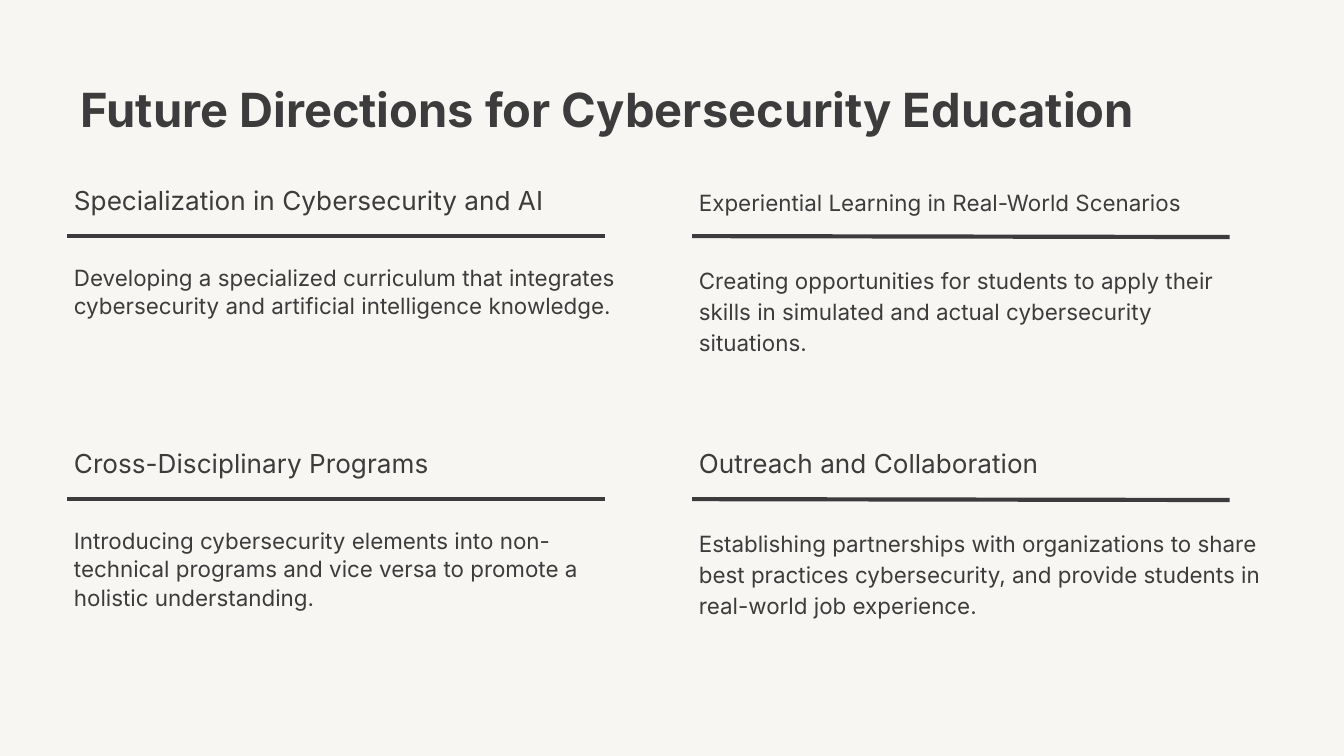
from lxml import etree
from pptx import Presentation
from pptx.dml.color import RGBColor
from pptx.enum import shapes, text
from pptx.oxml.ns import qn
from pptx.util import Pt

INK = RGBColor(0x3C, 0x3C, 0x3C)
PAPER = RGBColor(0xF8, 0xF6, 0xF3)
FONT = "Inter"

prs = Presentation()
prs.slide_width, prs.slide_height = Pt(720), Pt(405)
s = prs.slides.add_slide(prs.slide_layouts[5])
s.background.fill.solid()
s.background.fill.fore_color.rgb = PAPER


def write(sp, box, words, size, anchor, insets, bold=False):
    """Place a text shape (points) and format its single paragraph."""
    sp.left, sp.top, sp.width, sp.height = [Pt(v) for v in box]
    tf = sp.text_frame
    tf.text = words
    tf.word_wrap = True
    tf.auto_size = text.MSO_AUTO_SIZE.NONE
    tf.vertical_anchor = anchor
    tf.margin_left, tf.margin_top, tf.margin_right, tf.margin_bottom = [Pt(v) for v in insets]
    p = tf.paragraphs[0]
    p.alignment = text.PP_ALIGN.LEFT
    f = p.runs[0].font
    f.name, f.size, f.bold = FONT, Pt(size), bold
    f.color.rgb = INK
    return p


# Title
write(s.shapes.title, (36, 35.3, 648, 45.4), "Future Directions for Cybersecurity Education",
      25.2, text.MSO_ANCHOR.MIDDLE, (7.2, 7.2, 7.2, 7.2), bold=True)

# Grid: two rows of two topics, as (heading, heading size, body)
ROWS = [
    [("Specialization in Cybersecurity and AI", 14,
      "Developing a specialized curriculum that integrates cybersecurity and "
      "artificial intelligence knowledge."),
     ("Experiential Learning in Real-World Scenarios", 12,
      "Creating opportunities for students to apply their skills in simulated "
      "and actual cybersecurity situations.")],
    [("Cross-Disciplinary Programs", 14,
      "Introducing cybersecurity elements into non-technical programs and vice "
      "versa to promote a holistic understanding."),
     ("Outreach and Collaboration", 14,
      "Establishing partnerships with organizations to share best practices "
      "cybersecurity, and provide students in real-world job experience.")],
]
# Columns: left edge, line spacing, right inset of body, drop of the rule
COLUMNS = [(36, 1.05, 10.8, 0), (370.8, 1.15, 7.2, 0.5)]
RULE_TOP, ROW_STEP = 126.5, 140.9
WIDTH, HEAD_H, BODY_H, RULE_W = 313.2, 33.6, 99.4, 288

for i, row in enumerate(ROWS):
    y = RULE_TOP + i * ROW_STEP
    for (head, size, body), (x, spacing, right, drop) in zip(row, COLUMNS):
        # Heading above the rule
        sp = s.shapes.add_textbox(0, 0, 0, 0)
        write(sp, (x, y - HEAD_H, WIDTH, HEAD_H), head, size,
              text.MSO_ANCHOR.BOTTOM, (3.6, 0, 10.8, 10.8))

        # Body below the rule
        sp = s.shapes.add_textbox(0, 0, 0, 0)
        p = write(sp, (x, y, WIDTH, BODY_H), body, 12,
                  text.MSO_ANCHOR.TOP, (3.6, 14.4, right, 7.2))
        p.line_spacing = spacing
        p.space_after = Pt(10)

        # Rule
        rule = s.shapes.add_connector(shapes.MSO_CONNECTOR.STRAIGHT,
                                      Pt(x), Pt(y), Pt(x + RULE_W), Pt(y + drop))
        rule.line.color.rgb = INK
        rule.line.width = Pt(2.25)
        etree.SubElement(rule._element.spPr, qn("a:effectLst"))

prs.save("out.pptx")
